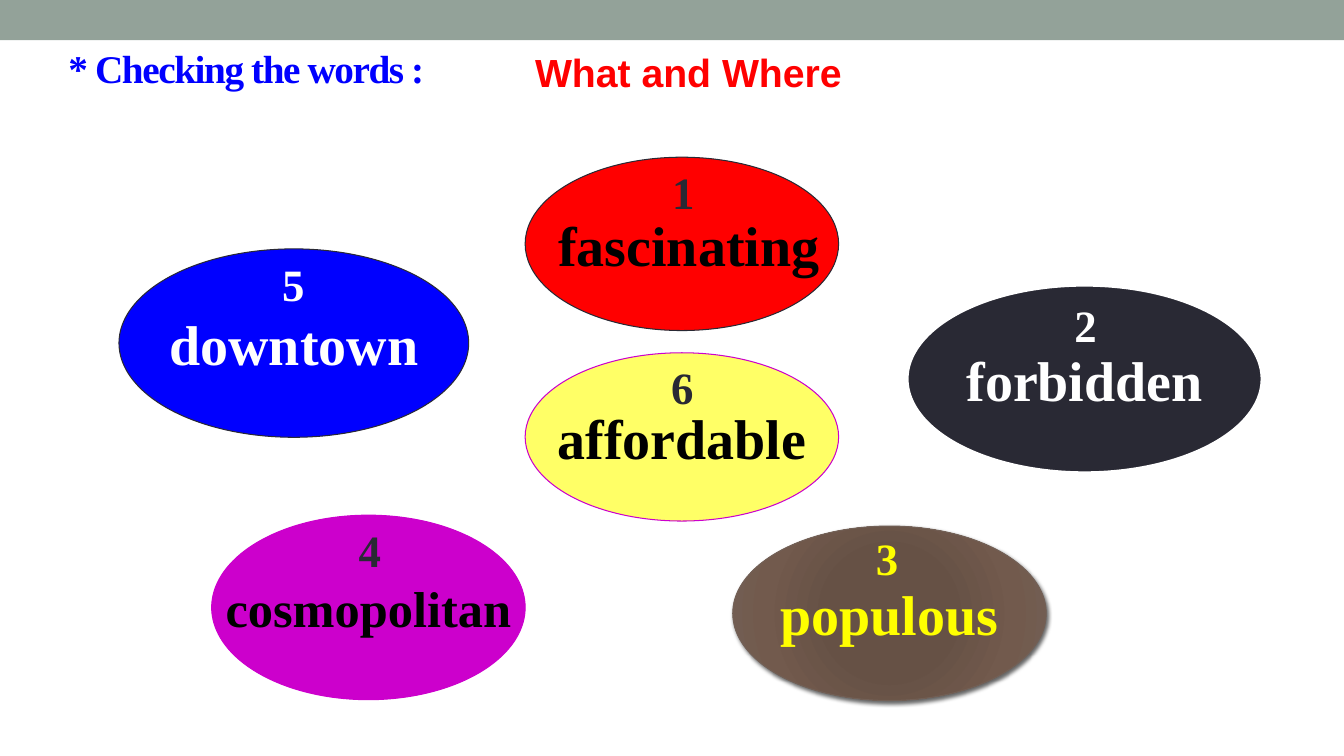
from pptx import Presentation
from pptx.dml.color import RGBColor
from pptx.enum.shapes import MSO_SHAPE
from pptx.enum.text import MSO_ANCHOR, PP_ALIGN
from pptx.oxml import parse_xml
from pptx.oxml.ns import nsdecls, qn
from pptx.util import Pt

COLORS = {
    "band": "93A299", "blue": "0000FF", "red": "FF0000", "black": "000000",
    "white": "FFFFFF", "dark": "292934", "purple": "CC00CC",
    "lemon": "FFFF66", "yellow": "FFFF00", "brown": "726056",
}
SERIF, SANS = "Times New Roman", "Arial"
SLIDE = (960, 540)
BAND_HEIGHT = 28.8
TITLE = ("* Checking the words :", (41.8, 26.6, 367.9, 43.9))
GAME = ("What and Where", (375.1, 31, 455.8, 41))
NUMBER_BOX = (31, 46)

# number, (left, top), word, word size, ellipse box, fill, line, line width, word colour, number colour
WORDS = [
    (1, (473, 113.8), " fascinating", 40, (375.1, 112.3, 223.9, 123.8), "red", "dark", 0.75, "black", "dark"),
    (4, (249.1, 370.1), "cosmopolitan", 36, (151.2, 368, 223.9, 131.8), "purple", "purple", 0.75, "black", "dark"),
    (6, (472.3, 253.4), "affordable", 40, (375.1, 252, 223.9, 120.2), "lemon", "purple", 0.75, "black", "dark"),
    (5, (194.4, 180), "downtown", 40, (85, 177.8, 249.8, 134.6), "blue", "dark", 0.75, "white", "white"),
    (3, (618.5, 375.8), " populous ", 40, (523.4, 375.8, 223.9, 124.6), "brown", "brown", 0.75, "yellow", "yellow"),
    (2, (760.3, 208.8), "forbidden", 40, (647.3, 203, 254.9, 135.4), "dark", "white", 3.5, "white", "white"),
]
GLOW_WORD = 3
GLOW_STOPS = [(0, "685044"), (34, "665145"), (70, "725A4D"), (100, "726056")]


def rgb(name):
    return RGBColor.from_string(COLORS[name])


def write(sp, text, font, size, color, align=PP_ALIGN.LEFT, anchor=MSO_ANCHOR.TOP, wrap=True):
    tf = sp.text_frame
    tf.word_wrap = wrap
    tf.vertical_anchor = anchor
    p = tf.paragraphs[0]
    p.alignment = align
    p.font.name, p.font.size, p.font.bold = font, Pt(size), True
    p.font.color.rgb = rgb(color)
    r = p.add_run()
    r.text = text
    return r


def add_text(s, text, box, *style, **layout):
    return write(s.shapes.add_textbox(*map(Pt, box)), text, *style, **layout)


def add_filled(s, kind, box, fill):
    sp = s.shapes.add_shape(kind, *map(Pt, box))
    sp.shadow.inherit = False
    sp.fill.solid()
    sp.fill.fore_color.rgb = rgb(fill)
    return sp


def add_glow(sp):
    stops = "".join(f'<a:gs pos="{pos * 1000}"><a:srgbClr val="{c}"/></a:gs>' for pos, c in GLOW_STOPS)
    grad = parse_xml(
        f'<a:gradFill {nsdecls("a")}><a:gsLst>{stops}</a:gsLst><a:path path="circle">'
        '<a:fillToRect l="50000" t="50000" r="50000" b="50000"/></a:path></a:gradFill>')
    shadow = parse_xml(
        f'<a:outerShdw {nsdecls("a")} blurRad="{Pt(3)}" dist="{Pt(2)}" dir="2700000">'
        f'<a:srgbClr val="{COLORS["black"]}"><a:alpha val="60000"/></a:srgbClr></a:outerShdw>')
    props = sp.element.spPr
    props.replace(props.find(qn("a:solidFill")), grad)
    props.find(qn("a:effectLst")).append(shadow)


def main():
    """Build the vocabulary slide and save it."""
    prs = Presentation()
    prs.slide_width, prs.slide_height = map(Pt, SLIDE)
    s = prs.slides.add_slide(prs.slide_layouts[6])

    band = add_filled(s, MSO_SHAPE.RECTANGLE, (0, 0, SLIDE[0], BAND_HEIGHT), "band")
    band.line.fill.background()
    r = add_text(s, *TITLE, SERIF, 28, "blue", anchor=MSO_ANCHOR.MIDDLE)
    r.font.bold = True
    r.font._element.set("spc", "-100")
    add_text(s, *GAME, SANS, 28, "red")

    for number, _, word, size, box, fill, line, width, color, _ in WORDS:
        sp = add_filled(s, MSO_SHAPE.OVAL, box, fill)
        sp.line.color.rgb = rgb(line)
        sp.line.width = Pt(width)
        write(sp, word, SERIF, size, color, PP_ALIGN.CENTER, MSO_ANCHOR.MIDDLE, wrap=False)
        if number == GLOW_WORD:
            add_glow(sp)

    for number, corner, *_, color in sorted(WORDS):
        add_text(s, str(number), corner + NUMBER_BOX, SERIF, 32, color, wrap=False)

    prs.save("out.pptx")


if __name__ == "__main__":
    main()
